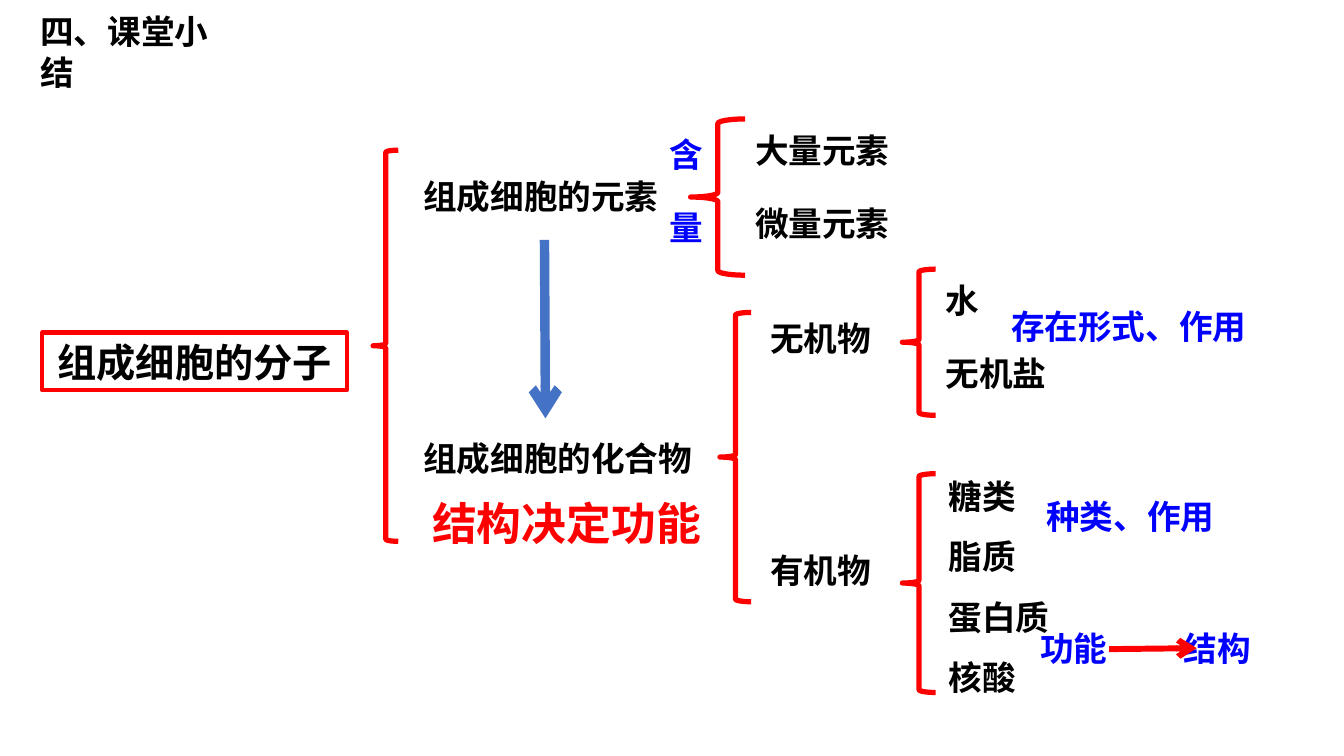
from lxml import etree
from pptx import Presentation
from pptx import util as u
from pptx.dml.color import RGBColor
from pptx.enum import shapes, text
from pptx.oxml.ns import qn

PX = u.Inches(1) // 100
FONT = "Noto Sans CJK SC"
BLACK, RED, BLUE, STEEL = "000000", "FF0000", "0000FF", "4472C4"
PAIR_GAP = 23


def px(*lengths):
    return [u.Emu(length * PX) for length in lengths]


def rgb(hex_colour):
    return RGBColor.from_string(hex_colour)


def write(frame, lines, size=24, colour=BLACK, align=text.PP_ALIGN.LEFT,
          gap=0, spacing=None, tab=None):
    """Fill a text frame; gap is the points between lines, tab a stop in px."""
    frame.word_wrap = True
    frame.auto_size = text.MSO_AUTO_SIZE.SHAPE_TO_FIT_TEXT
    frame.text = "\n".join(lines)
    for index, paragraph in enumerate(frame.paragraphs):
        paragraph.alignment = align
        if index and gap:
            paragraph.space_before = u.Pt(gap)
        if spacing:
            paragraph.line_spacing = spacing
        properties = paragraph._p.get_or_add_pPr()
        if tab:
            stops = etree.SubElement(properties, qn("a:tabLst"))
            etree.SubElement(stops, qn("a:tab"), pos=str(tab * PX), algn="l")
        font = paragraph.font
        font.size, font.bold, font.name = u.Pt(size), True, FONT
        font.color.rgb = rgb(colour)
        etree.SubElement(properties.find(qn("a:defRPr")), qn("a:ea"), typeface=FONT)


def label(slide, box, *lines, **style):
    write(slide.shapes.add_textbox(*px(*box)).text_frame, lines, **style)


def outline(slide, kind, box, width):
    shape = slide.shapes.add_shape(kind, *px(*box))
    shape.shadow.inherit = False
    shape.fill.background()
    shape.line.color.rgb = rgb(RED)
    shape.line.width = u.Pt(width)
    return shape


def brace(slide, *box):
    outline(slide, shapes.MSO_SHAPE.LEFT_BRACE, box, 3.75)


def arrow(slide, ends, colour, width):
    connector = slide.shapes.add_connector(shapes.MSO_CONNECTOR.STRAIGHT, *px(*ends))
    connector.line.color.rgb = rgb(colour)
    connector.line.width = u.Pt(width)
    etree.SubElement(connector.line._get_or_add_ln(), qn("a:tailEnd"), type="arrow")
    etree.SubElement(connector._element.spPr, qn("a:effectLst"))


def heading(slide, left, top):
    title = slide.shapes.title
    title.left, title.top, title.width, title.height = px(left, top, 220, 50)
    write(title.text_frame, ["四、课堂小结"])
    title.text_frame.word_wrap = False
    title.text_frame.vertical_anchor = text.MSO_ANCHOR.TOP


def root_topic(slide, left, top):
    topic = outline(slide, shapes.MSO_SHAPE.RECTANGLE, (left, top, 302, 57), 3)
    write(topic.text_frame, ["组成细胞的分子"], size=28, align=text.PP_ALIGN.CENTER)
    brace(slide, left + 328, top - 181, 25, 388)


def elements(slide, left, top):
    label(slide, (left, top + 52, 275, 50), "组成细胞的元素")
    brace(slide, left + 275, top, 54, 155)
    label(slide, (left + 329, top + 6, 207, 131), "大量元素", "微量元素", gap=PAIR_GAP)
    label(slide, (left + 244, top + 10, 60, 131), "含", "量", colour=BLUE, gap=PAIR_GAP)
    arrow(slide, (left + 130, top + 120, left + 131, top + 297), STEEL, 6.75)


def compounds(slide, left, top):
    label(slide, (left, top + 120, 304, 50), "组成细胞的化合物")
    label(slide, (left + 6, top + 177, 292, 64), "结构决定功能",
          size=32, colour=RED, align=text.PP_ALIGN.CENTER)
    brace(slide, left + 304, top, 31, 287)
    label(slide, (left + 344, top, 207, 293), "无机物", "有机物", gap=137)


def inorganic(slide, left, top):
    brace(slide, left, top, 33, 145)
    label(slide, (left + 33, top + 6, 129, 131), "水", "无机盐", gap=PAIR_GAP)
    label(slide, (left + 98, top + 32, 257, 50), "存在形式、作用", colour=BLUE)


def organic(slide, left, top):
    label(slide, (left + 36, top - 23, 149, 252),
          "糖类", "脂质", "蛋白质", "核酸", spacing=1.5)
    brace(slide, left, top, 33, 217)
    label(slide, (left + 133, top + 17, 223, 50), "种类、作用", colour=BLUE)
    label(slide, (left + 127, top + 148, 277, 50), "功能\t结构", colour=BLUE, tab=142)
    arrow(slide, (left + 205, top + 174, left + 292, top + 173), RED, 4.25)


def main():
    deck = Presentation()
    deck.slide_width, deck.slide_height = px(1333, 750)
    slide = deck.slides.add_slide(deck.slide_layouts.get_by_name("Title Only"))
    heading(slide, 30, 6)
    root_topic(slide, 42, 330)
    elements(slide, 410, 118)
    compounds(slide, 410, 310)
    inorganic(slide, 895, 267)
    organic(slide, 895, 470)
    deck.save("out.pptx")


if __name__ == "__main__":
    main()
